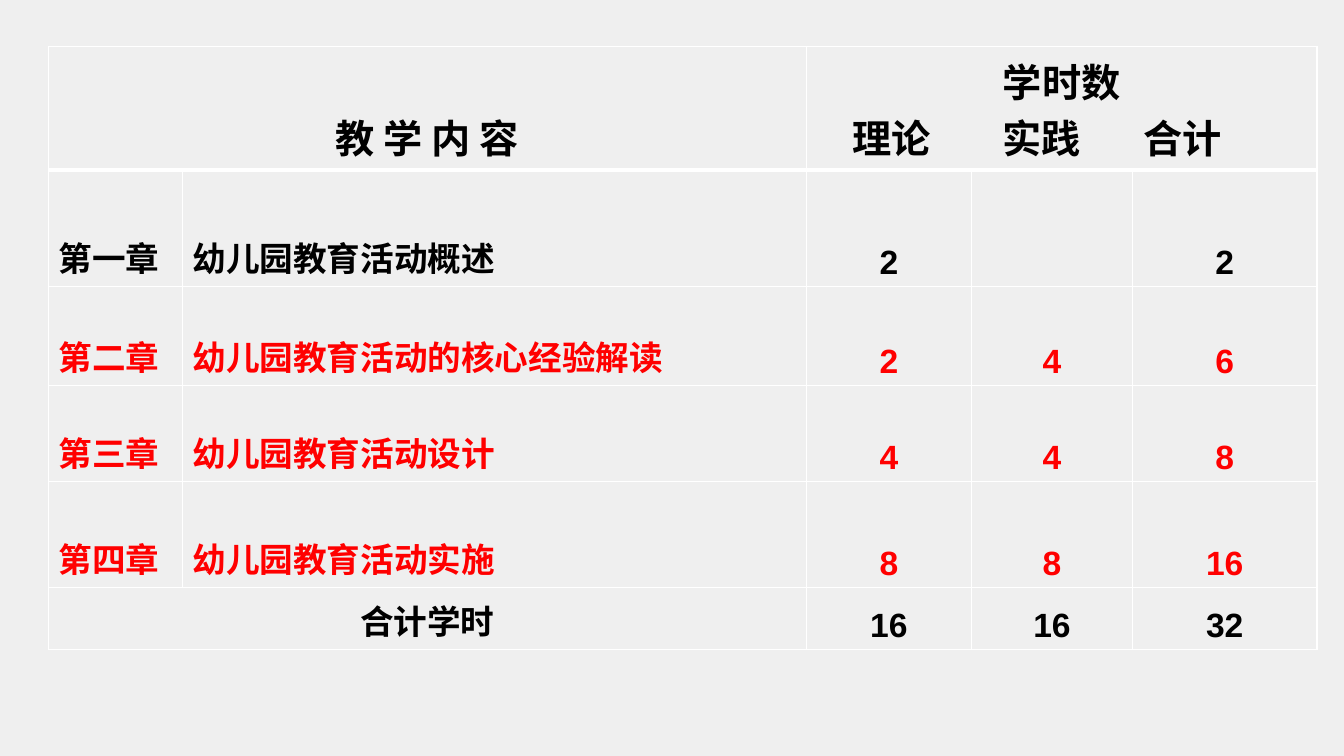
import pptx
import pptx.util
import pptx.dml.color
import pptx.enum.text
import pptx.oxml
import pptx.oxml.ns
import lxml.etree

Cm, Pt = pptx.util.Cm, pptx.util.Pt
RGB = pptx.dml.color.RGBColor.from_string
ALIGN = pptx.enum.text.PP_ALIGN
LOW = pptx.enum.text.MSO_ANCHOR.BOTTOM

# Content
HEAD = ["教 学 内 容", "", "学时数\n\t理论\t实践\t合计", "", ""]
UNITS = [
    ("第一章", "幼儿园教育活动概述", "2", "", "2"),
    ("第二章", "幼儿园教育活动的核心经验解读", "2", "4", "6"),
    ("第三章", "幼儿园教育活动设计", "4", "4", "8"),
    ("第四章", "幼儿园教育活动实施", "8", "8", "16"),
]
TOTAL = ["合计学时", "", "16", "16", "32"]
ROWS = [HEAD, *UNITS, TOTAL]
LAST = len(ROWS) - 1
MERGES = [(0, 0, 1), (0, 2, 4), (LAST, 0, 1)]  # row, first column, last column

COLORS = {"back": "EFEFEF", "text": "000000", "focus": "FF0000", "line": "FFFFFF"}
WIDTHS = [3.38, 15.72, 4.16, 4.06, 4.65]
HEIGHTS = [3.12, 2.92, 2.51, 2.41, 2.67, 1.57]
LEFT, TOP = 1.22, 1.17
TABS = [0.91, 4.69, 8.24]


def edge(cell, side, width):
    line = lxml.etree.SubElement(
        cell._tc.get_or_add_tcPr(), pptx.oxml.ns.qn("a:ln" + side), w=str(Pt(width)))
    fill = lxml.etree.SubElement(line, pptx.oxml.ns.qn("a:solidFill"))
    lxml.etree.SubElement(fill, pptx.oxml.ns.qn("a:srgbClr"), val=COLORS["line"])


def add_tabs(para):
    stops = lxml.etree.SubElement(
        para._p.get_or_add_pPr(), pptx.oxml.ns.qn("a:tabLst"))
    for stop in TABS:
        lxml.etree.SubElement(
            stops, pptx.oxml.ns.qn("a:tab"), pos=str(Cm(stop)), algn="l")


def style(para, row, col):
    tabbed = "\t" in para.text
    if tabbed:
        add_tabs(para)
    centred = not tabbed and (row in (0, LAST) or col > 1)
    para.alignment = ALIGN.CENTER if centred else ALIGN.LEFT
    font = para.font
    font.name, font.bold = "Arial", True
    font.size = Pt(28 if row == 0 else 24)
    font.color.rgb = RGB(COLORS["focus" if 1 < row < LAST else "text"])


def main():
    deck = pptx.Presentation()
    deck.slide_width, deck.slide_height = Cm(33.87), Cm(19.05)
    slide = deck.slides.add_slide(deck.slide_layouts[6])
    slide.background.fill.solid()
    slide.background.fill.fore_color.rgb = RGB(COLORS["back"])

    # Table grid
    table = slide.shapes.add_table(
        len(ROWS), len(WIDTHS), Cm(LEFT), Cm(TOP),
        Cm(sum(WIDTHS)), Cm(sum(HEIGHTS))).table
    table.first_row = table.horz_banding = False
    for col, width in zip(table.columns, WIDTHS):
        col.width = Cm(width)
    for row, height in zip(table.rows, HEIGHTS):
        row.height = Cm(height)
    for row, first, last in MERGES:
        table.cell(row, first).merge(table.cell(row, last))

    # Cells: borders, then fill and text
    for r, texts in enumerate(ROWS):
        for c, text in enumerate(texts):
            cell = table.cell(r, c)
            for side in "LRTB":
                heavy = (r, side) in ((0, "B"), (1, "T"))
                edge(cell, side, 3 if heavy else 1)
            cell.fill.background()
            cell.vertical_anchor = LOW
            if text:
                cell.text = text
                for para in cell.text_frame.paragraphs:
                    style(para, r, c)

    deck.save("out.pptx")


if __name__ == "__main__":
    main()
